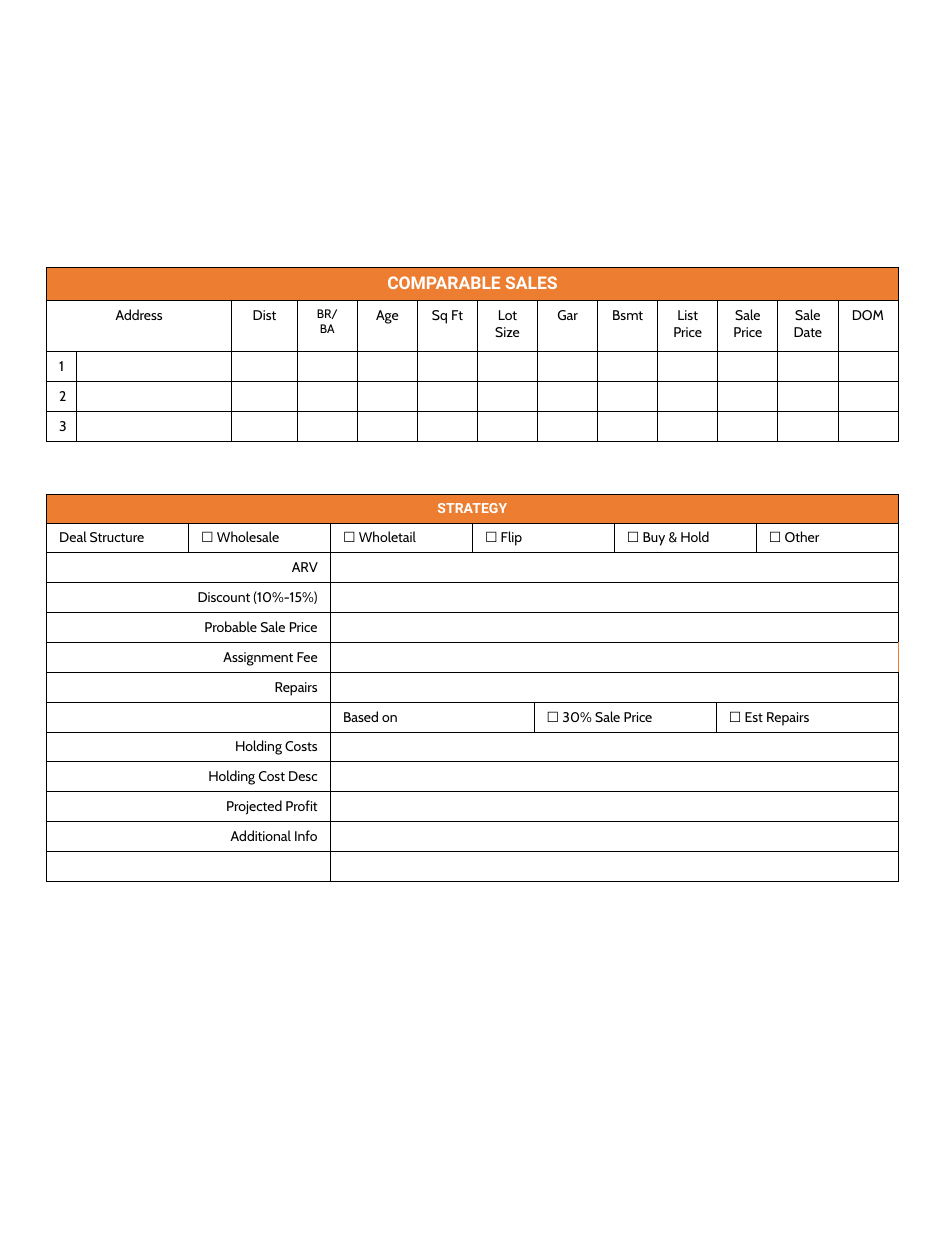
from dataclasses import dataclass
from typing import Sequence

from lxml.etree import SubElement
from pptx import Presentation
from pptx.dml.color import RGBColor
from pptx.enum.text import PP_ALIGN as Align
from pptx.oxml.ns import qn
from pptx.slide import Slide
from pptx.table import _Cell as TableCell
from pptx.util import Inches, Pt


@dataclass(frozen=True)
class Theme:
    accent: str = "ED7D31"
    ink: str = "000000"
    paper: str = "FFFFFF"
    heading_font: str = "Roboto"
    body_font: str = "Cabin"
    title_size: float = 10
    body_size: float = 8
    small_size: float = 7
    border: float = 0.5


THEME = Theme()


@dataclass(frozen=True)
class Entry:
    text: str = ""
    span: int = 1
    align: Align = Align.LEFT
    size: float = THEME.body_size
    heading: bool = False
    right_border: str = THEME.ink


def set_borders(cell: TableCell, right: str) -> None:
    properties = cell._tc.get_or_add_tcPr()
    for side in ("lnL", "lnR", "lnT", "lnB"):
        line = SubElement(properties, qn(f"a:{side}"), w=str(Pt(THEME.border)))
        fill = SubElement(line, qn("a:solidFill"))
        SubElement(fill, qn("a:srgbClr"), val=right if side == "lnR" else THEME.ink)


def write_entry(cell: TableCell, entry: Entry) -> None:
    font_name = THEME.heading_font if entry.heading else THEME.body_font
    cell.text_frame.text = entry.text
    for paragraph in cell.text_frame.paragraphs:
        paragraph.alignment = entry.align
        for run in paragraph.runs:
            run.font.name = font_name
            run.font.size = Pt(entry.size)
            run.font.bold = entry.heading
            run.font.color.rgb = RGBColor.from_string(
                THEME.paper if entry.heading else THEME.ink)
        # Keeps empty rows as low as the filled ones
        end = SubElement(paragraph._p, qn("a:endParaRPr"), sz=str(int(entry.size * 100)))
        SubElement(end, qn("a:latin"), typeface=font_name)


def draw_table(slide: Slide, left: float, top: float, widths: Sequence[float],
               heights: Sequence[float], rows: Sequence[Sequence[Entry]]) -> None:
    table = slide.shapes.add_table(
        len(rows), len(widths), Inches(left), Inches(top),
        Inches(sum(widths)), Inches(sum(heights))).table
    table.first_row = table.horz_banding = False
    for column, width in zip(table.columns, widths):
        column.width = Inches(width)
    for row, height in zip(table.rows, heights):
        row.height = Inches(height)

    for row_index, entries in enumerate(rows):
        start = 0
        for entry in entries:
            end = start + entry.span
            for column_index in range(start, end):
                cell = table.cell(row_index, column_index)
                set_borders(cell, entry.right_border)
                if entry.heading:
                    cell.fill.solid()
                    cell.fill.fore_color.rgb = RGBColor.from_string(THEME.accent)
                else:
                    cell.fill.background()
                write_entry(cell, Entry(size=entry.size))if column_index > start else None
            origin = table.cell(row_index, start)
            if entry.span > 1:
                origin.merge(table.cell(row_index, end - 1))
            write_entry(origin, entry)
            start = end


def labelled(label: str, right_border: str = THEME.ink) -> list[Entry]:
    return [Entry(label, 2, Align.RIGHT), Entry(span=6, right_border=right_border)]


TABLE_LEFT, TABLE_WIDTH, ROW_HEIGHT = 0.37, 6.76, 0.23

# Comparable sales: number, address and distance, then ten equal columns
LEAD_WIDTHS = [0.24, 1.23, 0.52]
DETAIL_WIDTH = (TABLE_WIDTH - sum(LEAD_WIDTHS)) / 10
SALES_WIDTHS = LEAD_WIDTHS + [DETAIL_WIDTH] * 10
SALES_HEADERS = ["Dist", "BR/\nBA", "Age", "Sq Ft", "Lot Size", "Gar", "Bsmt",
                 "List Price", "Sale Price", "Sale Date", "DOM"]
SALES_ROWS = [
    [Entry("COMPARABLE SALES", 13, Align.CENTER, THEME.title_size, True)],
    [Entry("Address", 2, Align.CENTER)] + [
        Entry(header, align=Align.CENTER,
              size=THEME.small_size if "\n" in header else THEME.body_size)
        for header in SALES_HEADERS],
    *[[Entry(str(number))] + [Entry()] * 12 for number in (1, 2, 3)],
]

# Strategy: six equal columns, two of them split for the repairs options
SIXTH = TABLE_WIDTH / 6
STRATEGY_WIDTHS = [SIXTH, SIXTH, SIXTH, 0.49, SIXTH - 0.49, 0.81, SIXTH - 0.81, SIXTH]
STRATEGY_ROWS = [
    [Entry("STRATEGY", 8, Align.CENTER, heading=True)],
    [Entry("Deal Structure"), Entry("☐ Wholesale"), Entry("☐ Wholetail"),
     Entry("☐ Flip", 2), Entry("☐ Buy & Hold", 2), Entry("☐ Other")],
    *[labelled(label) for label in ("ARV", "Discount (10%-15%)", "Probable Sale Price")],
    labelled("Assignment Fee", THEME.accent),
    labelled("Repairs"),
    [Entry(span=2), Entry("Based on", 2), Entry("☐ 30% Sale Price", 2),
     Entry("☐ Est Repairs", 2)],
    *[labelled(label) for label in ("Holding Costs", "Holding Cost Desc",
                                    "Projected Profit", "Additional Info", "")],
]


def main() -> None:
    deck = Presentation()
    deck.slide_width, deck.slide_height = Inches(7.5), Inches(10)
    slide = deck.slides.add_slide(deck.slide_layouts[6])
    draw_table(slide, TABLE_LEFT, 3.92, STRATEGY_WIDTHS,
               [ROW_HEIGHT] * len(STRATEGY_ROWS), STRATEGY_ROWS)
    draw_table(slide, TABLE_LEFT, 2.12, SALES_WIDTHS,
               [0.26, 0.41] + [ROW_HEIGHT] * 3, SALES_ROWS)
    deck.save("out.pptx")


if __name__ == "__main__":
    main()
